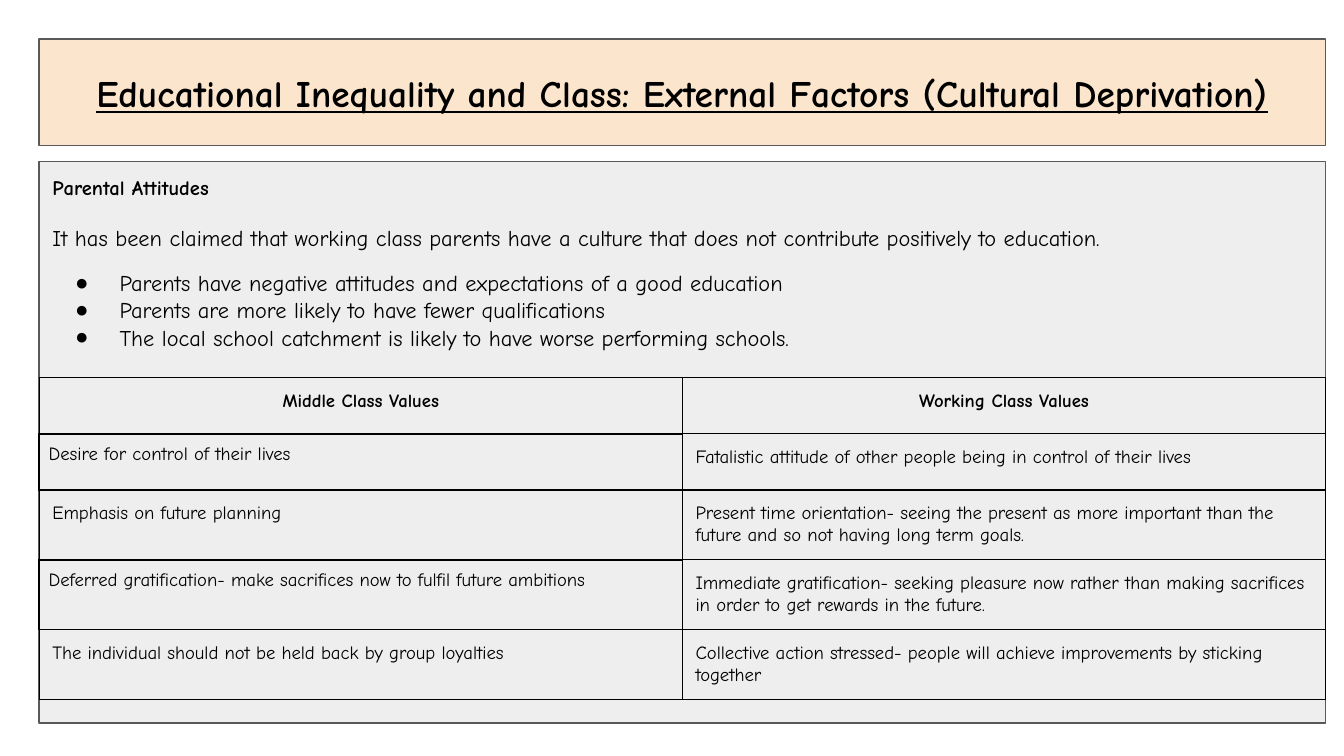
from dataclasses import dataclass

from lxml.etree import SubElement
from pptx import Presentation
from pptx.dml.color import RGBColor
from pptx.enum.text import MSO_ANCHOR, MSO_AUTO_SIZE, PP_ALIGN
from pptx.oxml.ns import qn
from pptx.util import Cm, Pt


@dataclass(frozen=True)
class Theme:
    font: str = "Comic Neue"
    ink: str = "000000"
    outline: str = "595959"
    banner: str = "FCE5CD"
    panel: str = "EEEEEE"
    title_size: float = 20
    heading_size: float = 11
    body_size: float = 12
    body_leading: float = 14.5
    table_size: float = 10
    thin: float = 0.75
    thick: float = 1


@dataclass(frozen=True)
class Box:
    left: float
    top: float
    width: float
    height: float


THEME = Theme()
PADDING = 0.25
TIGHT_PADDING = 0.18
TITLE = "Educational Inequality and Class: External Factors (Cultural Deprivation)"
HEADING = "Parental Attitudes"
CLAIM = ("It has been claimed that working class parents have a culture "
         "that does not contribute positively to education.")
REASONS = [
    "Parents have negative attitudes and expectations of a good education",
    "Parents are more likely to have fewer qualifications",
    "The local school catchment is likely to have worse performing schools.",
]
VALUES = [
    ("Middle Class Values", "Working Class Values"),
    ("Desire for control of their lives",
     "Fatalistic attitude of other people being in control of their lives"),
    ("Emphasis on future planning",
     "Present time orientation- seeing the present as more important than "
     "the future and so not having long term goals."),
    ("Deferred gratification- make sacrifices now to fulfil future ambitions",
     "Immediate gratification- seeking pleasure now rather than making "
     "sacrifices in order to get rewards in the future."),
    ("The individual should not be held back by group loyalties",
     "Collective action stressed- people will achieve improvements by "
     "sticking together"),
]
ROW_HEIGHTS = [1.06, 1.06, 1.32, 1.32, 1.32]
FRAMED_CELLS = {(1, 0), (3, 0)}
EDGES = {"lnL": (0, -1), "lnR": (0, 1), "lnT": (-1, 0), "lnB": (1, 0)}


def write(paragraph, text, size, bold=False, underline=False,
          align=PP_ALIGN.LEFT, before=0, leading=None, bullet=False):
    paragraph.alignment = align
    paragraph.space_before = Pt(before)
    paragraph.space_after = Pt(0)
    paragraph.line_spacing = Pt(leading) if leading else 1.0
    properties = paragraph._p.get_or_add_pPr()
    properties.set("marL", str(Cm(1.27) if bullet else 0))
    properties.set("indent", str(Cm(-0.84) if bullet else 0))
    if bullet:
        SubElement(properties, qn("a:buChar"), char="●")
    else:
        SubElement(properties, qn("a:buNone"))
    run = paragraph.add_run()
    run.text = text
    run.font.name = THEME.font
    run.font.size = Pt(size)
    run.font.bold = bold
    run.font.underline = underline
    run.font.color.rgb = RGBColor.from_string(THEME.ink)


def pad(target, padding):
    target.margin_left = target.margin_right = Cm(padding)
    target.margin_top = target.margin_bottom = Cm(padding)


def place_panel(panel, box, color, anchor):
    panel.left, panel.top = Cm(box.left), Cm(box.top)
    panel.width, panel.height = Cm(box.width), Cm(box.height)
    panel.fill.solid()
    panel.fill.fore_color.rgb = RGBColor.from_string(color)
    panel.line.color.rgb = RGBColor.from_string(THEME.outline)
    panel.line.width = Pt(THEME.thin)
    frame = panel.text_frame
    frame.word_wrap = True
    frame.auto_size = MSO_AUTO_SIZE.NONE
    frame.vertical_anchor = anchor
    pad(frame, PADDING)
    return frame


def build_banner(slide, box):
    frame = place_panel(slide.shapes.title, box, THEME.banner, MSO_ANCHOR.MIDDLE)
    write(frame.paragraphs[0], TITLE, THEME.title_size, bold=True,
          underline=True, align=PP_ALIGN.CENTER)


def build_argument(slide, box):
    frame = place_panel(slide.placeholders[1], box, THEME.panel, MSO_ANCHOR.TOP)
    write(frame.paragraphs[0], HEADING, THEME.heading_size, bold=True)
    write(frame.add_paragraph(), CLAIM, THEME.body_size, before=13,
          leading=THEME.body_leading)
    for index, reason in enumerate(REASONS):
        write(frame.add_paragraph(), reason, THEME.body_size, bullet=True,
              before=0 if index else 10, leading=THEME.body_leading)


def draw_borders(cell, row, column):
    properties = cell._tc.get_or_add_tcPr()
    for position, (edge, (down, across)) in enumerate(EDGES.items()):
        touching = {(row, column), (row + down, column + across)}
        weight = THEME.thick if touching & FRAMED_CELLS else THEME.thin
        border = SubElement(properties, qn(f"a:{edge}"), w=str(Pt(weight)))
        fill = SubElement(border, qn("a:solidFill"))
        SubElement(fill, qn("a:srgbClr"), val=THEME.ink)
        properties.insert(position, border)


def build_values(slide, box):
    values = slide.shapes.add_table(
        len(VALUES), len(VALUES[0]), Cm(box.left), Cm(box.top),
        Cm(box.width), Cm(box.height)).table
    values.first_row = values.horz_banding = False
    for row, (height, texts) in enumerate(zip(ROW_HEIGHTS, VALUES)):
        values.rows[row].height = Cm(height)
        for column, text in enumerate(texts):
            cell = values.cell(row, column)
            cell.fill.background()
            cell.vertical_anchor = MSO_ANCHOR.TOP
            pad(cell, TIGHT_PADDING if (row, column) in FRAMED_CELLS else PADDING)
            write(cell.text_frame.paragraphs[0], text, THEME.table_size,
                  bold=row == 0,
                  align=PP_ALIGN.LEFT if row else PP_ALIGN.CENTER)
            draw_borders(cell, row, column)


def main():
    deck = Presentation()
    deck.slide_width, deck.slide_height = Cm(25.4), Cm(14.29)
    slide = deck.slides.add_slide(deck.slide_layouts[1])
    left, width = 0.74, 24.31
    build_banner(slide, Box(left, 0.74, width, 2.01))
    build_argument(slide, Box(left, 3.05, width, 10.62))
    build_values(slide, Box(left, 7.14, width, sum(ROW_HEIGHTS)))
    deck.save("out.pptx")


if __name__ == "__main__":
    main()
